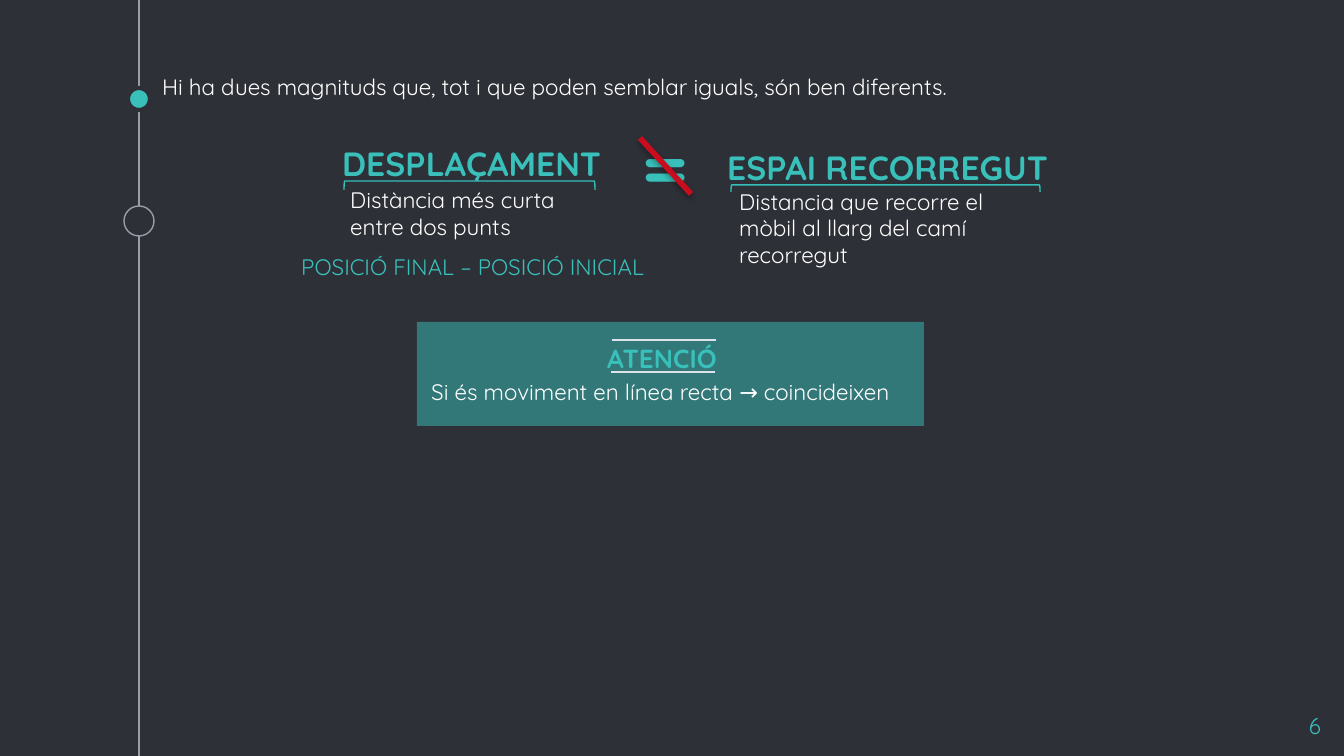
from dataclasses import dataclass

from lxml.etree import SubElement
from pptx import Presentation
from pptx.dml.color import RGBColor
from pptx.enum.shapes import MSO_CONNECTOR as Link, MSO_SHAPE as Form
from pptx.enum.text import MSO_ANCHOR as Anchor, MSO_AUTO_SIZE as Fit, PP_ALIGN as Align
from pptx.oxml.ns import qn
from pptx.util import Emu, Pt

SCALE = 914400 / 134.4


@dataclass(frozen=True)
class Theme:
    font: str = "Quicksand"
    back: str = "2E3037"
    teal: str = "39C0BA"
    brace: str = "34BFB9"
    white: str = "FFFFFF"
    grey: str = "999FA9"
    pale: str = "DDE2E9"
    red: str = "C90D1F"
    black: str = "000000"
    small: int = 12
    mid: int = 14
    large: int = 18
    huge: int = 40
    thin: float = 0.75
    rim: float = 2.25
    thick: float = 3


T = Theme()


@dataclass(frozen=True)
class Box:
    x: int
    y: int
    w: int
    h: int


@dataclass(frozen=True)
class Label:
    text: str
    box: Box
    size: int = T.small
    color: str = T.white
    bold: bool = False
    wrap: bool = True


@dataclass(frozen=True)
class Rule:
    x1: int
    y1: int
    x2: int
    y2: int
    color: str
    width: float = T.thin


def px(n: float) -> Emu:
    return Emu(round(n * SCALE))


def rgb(code: str) -> RGBColor:
    return RGBColor.from_string(code)


def place(shape, box: Box) -> None:
    shape.left, shape.top = px(box.x), px(box.y)
    shape.width, shape.height = px(box.w), px(box.h)


def write(shape, label: Label):
    """Fill a text shape and format its only paragraph."""
    frame = shape.text_frame
    frame.text = label.text
    frame.word_wrap = label.wrap
    frame.vertical_anchor = Anchor.TOP
    para = frame.paragraphs[0]
    font = para.runs[0].font
    font.name, font.size, font.bold = T.font, Pt(label.size), label.bold
    font.color.rgb = rgb(label.color)
    return para


def pad(shape) -> None:
    frame = shape.text_frame
    frame.auto_size = Fit.NONE
    frame.margin_left = frame.margin_right = px(13)
    frame.margin_top = frame.margin_bottom = px(13)


def add_label(slide, label: Label):
    shape = slide.shapes.add_textbox(0, 0, 0, 0)
    write(shape, label)
    shape.text_frame.auto_size = Fit.SHAPE_TO_FIT_TEXT
    place(shape, label.box)
    return shape


def add_form(slide, kind: Form, box: Box, fill: str = "", line: str = "",
             width: float = T.thin):
    shape = slide.shapes.add_shape(kind, px(box.x), px(box.y), px(box.w), px(box.h))
    shape.shadow.inherit = False
    if fill:
        shape.fill.solid()
        shape.fill.fore_color.rgb = rgb(fill)
    else:
        shape.fill.background()
    if line:
        shape.line.color.rgb = rgb(line)
        shape.line.width = Pt(width)
    else:
        shape.line.fill.background()
    return shape


def add_brace(slide, box: Box) -> None:
    """Draw a bracket that opens downward and fills the given box."""
    mid_x, mid_y = box.x + box.w / 2, box.y + box.h / 2
    shape = add_form(slide, Form.LEFT_BRACKET, box, line=T.brace)
    shape.left, shape.top = px(mid_x - box.h / 2), px(mid_y - box.w / 2)
    shape.width, shape.height = px(box.h), px(box.w)
    shape.rotation = 90


def add_rule(slide, rule: Rule):
    """Draw a line and return its empty effect list."""
    line = slide.shapes.add_connector(
        Link.STRAIGHT, px(rule.x1), px(rule.y1), px(rule.x2), px(rule.y2))
    line.line.color.rgb = rgb(rule.color)
    line.line.width = Pt(rule.width)
    return SubElement(line._element.spPr, qn("a:effectLst"))


def set_alpha(color, percent: int) -> None:
    SubElement(color, qn("a:alpha")).set("val", str(percent * 1000))


def add_shade(effects) -> None:
    shade = SubElement(effects, qn("a:outerShdw"), blurRad=str(Pt(3.1)),
                       dist=str(Pt(1.8)), dir="5400000", rotWithShape="0")
    set_alpha(SubElement(shade, qn("a:srgbClr"), val=T.black), 35)


RAIL = 139
TERMS = [
    Label("DESPLAÇAMENT", Box(329, 136, 289, 54), T.large, T.teal, True, False),
    Label("ESPAI RECORREGUT", Box(714, 140, 352, 54), T.large, T.teal, True, False),
    Label("=", Box(629, 112, 74, 104), T.huge, T.teal, True, False),
]
BRACES = [Box(344, 181, 251, 9), Box(731, 185, 309, 7)]
NOTES = [
    Label("Distància més curta entre dos punts", Box(337, 180, 265, 67)),
    Label("POSICIÓ FINAL – POSICIÓ INICIAL", Box(288, 247, 371, 40), color=T.teal),
    Label("Distancia que recorre el mòbil al llarg del camí recorregut",
          Box(726, 181, 314, 95)),
    Label("ATENCIÓ", Box(594, 336, 138, 46), T.mid, T.teal, True, False),
    Label("Si és moviment en línea recta → coincideixen", Box(418, 372, 491, 40)),
]


def main() -> None:
    deck = Presentation()
    deck.slide_width, deck.slide_height = px(1344), px(756)
    slide = deck.slides.add_slide(deck.slide_layouts[1])
    slide.background.fill.solid()
    slide.background.fill.fore_color.rgb = rgb(T.back)

    # Timeline rail with its two marks
    add_rule(slide, Rule(RAIL, 0, RAIL, 756, T.grey))
    add_form(slide, Form.OVAL, Box(RAIL - 11, 88, 22, 22), T.teal, T.back, T.rim)
    add_form(slide, Form.OVAL, Box(RAIL - 15, 206, 30, 30), T.back, T.grey)

    # Warning panel
    panel = add_form(slide, Form.RECTANGLE, Box(417, 322, 507, 104), T.teal)
    set_alpha(panel._element.spPr.find(".//" + qn("a:srgbClr")), 50)

    # Opening sentence in the body placeholder
    title = slide.shapes.title._element
    title.getparent().remove(title)
    body = slide.placeholders[1]
    intro = Label("Hi ha dues magnituds que, tot i que poden semblar iguals, "
                  "són ben diferents.", Box(149, 60, 1082, 66))
    para = write(body, intro)
    place(body, intro.box)
    pad(body)
    para.space_before = Pt(6)
    props = para._p.get_or_add_pPr()
    props.set("marL", "0")
    props.set("indent", "0")
    SubElement(props, qn("a:buNone"))

    # Page number
    page = add_label(slide, Label("6", Box(1253, 699, 81, 46), color=T.teal))
    pad(page)
    page.text_frame.paragraphs[0].alignment = Align.RIGHT

    # The two terms and the crossed equals sign
    for term in TERMS:
        add_label(slide, term)
    add_shade(add_rule(slide, Rule(640, 138, 691, 194, T.red, T.thick)))
    for box in BRACES:
        add_brace(slide, box)

    # Meanings and warning text
    for note in NOTES:
        add_label(slide, note)
    for x, y in ((612, 340), (611, 372)):
        add_rule(slide, Rule(x, y, x + 104, y, T.pale))

    deck.save("out.pptx")


if __name__ == "__main__":
    main()
